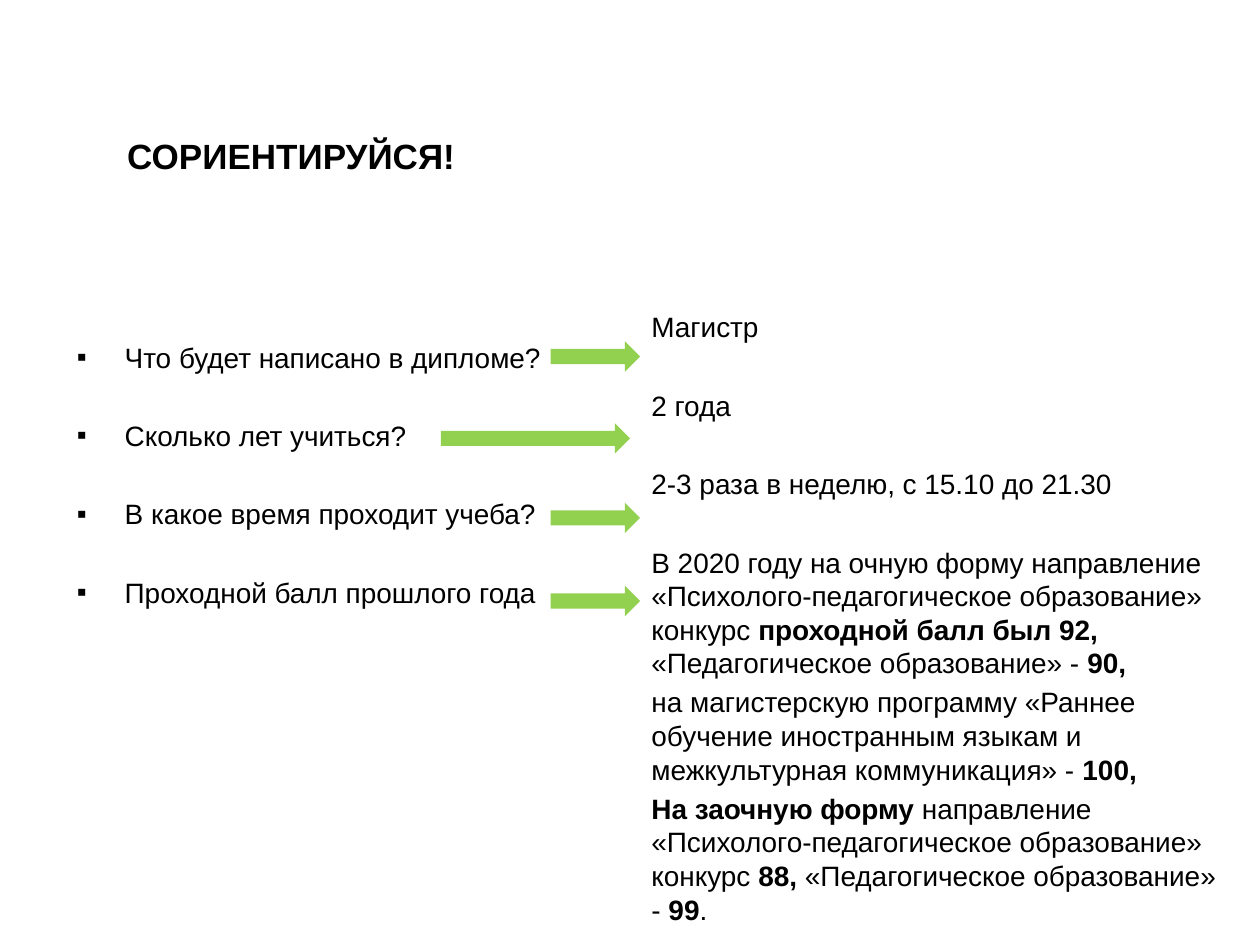
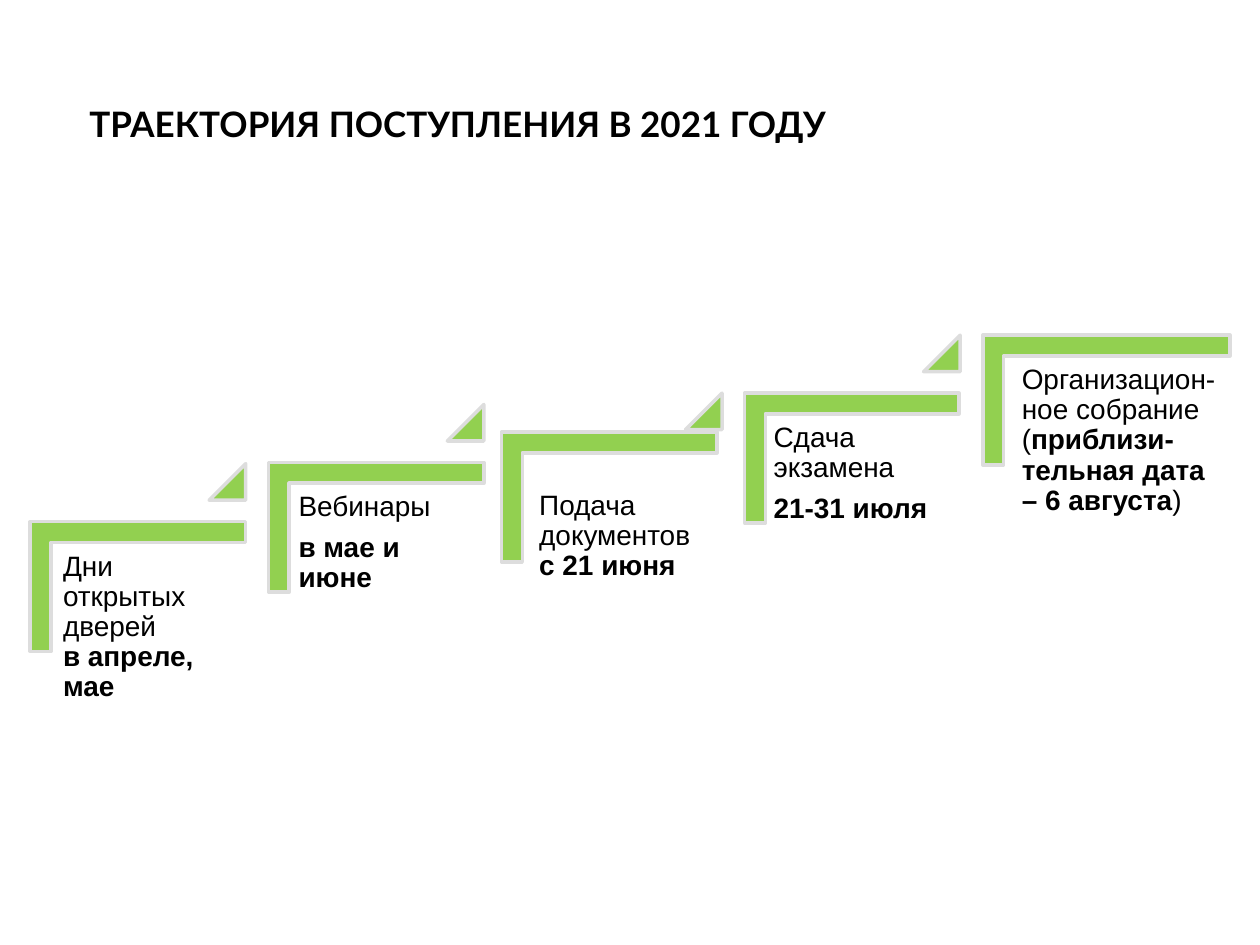
from lxml import etree
from pptx import Presentation
from pptx.dml.color import RGBColor
from pptx.enum.shapes import MSO_SHAPE
from pptx.enum.text import MSO_ANCHOR, MSO_AUTO_SIZE, PP_ALIGN
from pptx.oxml.ns import qn
from pptx.util import Inches, Pt

BLACK = RGBColor(0x00, 0x00, 0x00)
GREEN = RGBColor(0x92, 0xD0, 0x50)
GREY = RGBColor(0xDD, 0xDD, 0xDD)
TEXT_FONT = "Arial"
TEXT_SIZE = Pt(16)
ROW_GAP = Pt(25.6)
PARAGRAPH_GAP = Pt(3.2)

LEFT = PP_ALIGN.LEFT
TOP, MIDDLE = MSO_ANCHOR.TOP, MSO_ANCHOR.MIDDLE
RIGHT_ARROW = MSO_SHAPE.RIGHT_ARROW
CORNER = MSO_SHAPE.CORNER
TRIANGLE = MSO_SHAPE.ISOSCELES_TRIANGLE


def write(box, place, paragraphs, bullet=None, anchor=TOP, font=TEXT_FONT, size=TEXT_SIZE):
    """Place the box and fill it; *stars* mark bold words, a newline breaks the line."""
    box.left, box.top, box.width, box.height = [Inches(n) for n in place]
    frame = box.text_frame
    frame.word_wrap = True
    frame.auto_size = MSO_AUTO_SIZE.NONE
    frame.vertical_anchor = anchor
    for number, text in enumerate(paragraphs):
        paragraph = frame.add_paragraph() if number else frame.paragraphs[0]
        paragraph.alignment = LEFT
        paragraph.space_before = Pt(0)
        properties = paragraph._p.get_or_add_pPr()
        indent = Inches(0.38) if bullet else 0
        properties.set("marL", str(indent))
        properties.set("indent", str(-indent))
        if bullet:
            etree.SubElement(properties, qn("a:buChar")).set("char", bullet)
        else:
            etree.SubElement(properties, qn("a:buNone"))
        paragraph.font.name = font
        paragraph.font.size = size
        paragraph.font.color.rgb = BLACK
        for part, words in enumerate(text.split("*")):
            for row, line in enumerate(words.split("\n")):
                if row:
                    paragraph.add_line_break()
                if line:
                    run = paragraph.add_run()
                    run.text = line
                    run.font.bold = part % 2 == 1
    return frame


def add_green(slide, kind, left, top, width, height, outlined=True):
    shape = slide.shapes.add_shape(kind, Inches(left), Inches(top), Inches(width), Inches(height))
    shape.shadow.inherit = False
    shape.fill.solid()
    shape.fill.fore_color.rgb = GREEN
    if outlined:
        shape.line.color.rgb = GREY
        shape.line.width = Pt(2)
    else:
        shape.line.fill.background()
    return shape


prs = Presentation()
prs.slide_width, prs.slide_height = Inches(10), Inches(7.5)

# Slide 1: questions and answers
slide = prs.slides.add_slide(prs.slide_layouts[3])
for extra in list(slide.placeholders)[3:]:
    extra.element.getparent().remove(extra.element)
title, questions, answers = slide.placeholders
write(title, (0.91, 0.84, 7.58, 0.78), ["*СОРИЕНТИРУЙСЯ!*"], anchor=MIDDLE, size=Pt(20))

question_frame = write(questions, (0.51, 2.65, 4.83, 4.25), [
    "Что будет написано в дипломе?",
    "Сколько лет учиться?",
    "В какое время проходит учеба?",
    "Проходной балл прошлого года",
], bullet="▪")
answer_frame = write(answers, (5.07, 2.41, 4.8, 4.25), [
    "Магистр",
    "2 года",
    "2-3 раза в неделю, с 15.10 до 21.30",
    "В 2020 году на очную форму направление «Психолого-педагогическое образование» "
    "конкурс *проходной балл был 92, *«Педагогическое образование» - *90,*",
    "на магистерскую программу «Раннее обучение иностранным языкам и "
    "межкультурная коммуникация» - *100,*",
    "*На заочную форму *направление «Психолого-педагогическое образование» "
    "конкурс *88, *«Педагогическое образование» - *99*.",
])
for frame in (question_frame, answer_frame):
    for paragraph in frame.paragraphs[1:4]:
        paragraph.space_before = ROW_GAP
for paragraph in answer_frame.paragraphs[4:]:
    paragraph.space_before = PARAGRAPH_GAP

for left, top, width in [(4.37, 2.71, 0.71), (3.5, 3.36, 1.5), (4.37, 3.99, 0.71), (4.37, 4.65, 0.71)]:
    add_green(slide, RIGHT_ARROW, left, top, width, 0.24, outlined=False)

# Slide 2: admission steps
slide = prs.slides.add_slide(prs.slide_layouts[5])
write(slide.shapes.title, (0.61, 0.76, 8.19, 0.87), ["*ТРАЕКТОРИЯ ПОСТУПЛЕНИЯ В 2021 ГОДУ*"],
      font="Lato", size=Pt(20))

CORNER_HEIGHT = 1.03
TRIANGLE_SIDE = 0.29
# Corner left, top and length; text left, top and width; triangle top; text
steps = [
    (0.24, 4.14, 1.71, 0.43, 4.31, 1.51, 3.68, ["Дни открытых дверей\n*в апреле, мае*"]),
    (2.13, 3.67, 1.71, 2.3, 3.84, 1.54, 3.21, ["Вебинары", "*в мае и июне*"]),
    (3.98, 3.43, 1.71, 4.21, 3.83, 1.54, 3.12, ["Подача документов\n*с 21 июня*"]),
    (5.91, 3.12, 1.7, 6.07, 3.29, 1.54, 2.66, ["Сдача экзамена", "*21-31 июля*"]),
    (7.8, 2.66, 1.96, 8.04, 2.83, 1.73, None,
     ["Организацион-ное собрание (*приблизи-тельная дата – 6 августа*)"]),
]
for number, (left, top, length, text_left, text_top, text_width, triangle_top, text) in enumerate(steps):
    # The corner is turned by 90°, so its frame is upright around the same centre
    turn = (length - CORNER_HEIGHT) / 2
    corner = add_green(slide, CORNER, left + turn, top - turn, CORNER_HEIGHT, length)
    corner.rotation = 90
    corner.adjustments[0] = corner.adjustments[1] = 0.16

    caption = slide.shapes.add_textbox(0, 0, 0, 0)
    frame = write(caption, (text_left, text_top, text_width, 1.35), text)
    frame.margin_left = frame.margin_right = frame.margin_top = frame.margin_bottom = Inches(0.07)
    for paragraph in frame.paragraphs:
        paragraph.line_spacing = 0.9
        paragraph.space_after = Pt(5.9)

    if triangle_top:
        triangle = add_green(slide, TRIANGLE, 1.66 + 1.89 * number, triangle_top,
                             TRIANGLE_SIDE, TRIANGLE_SIDE)
        triangle.adjustments[0] = 1

prs.save("out.pptx")
